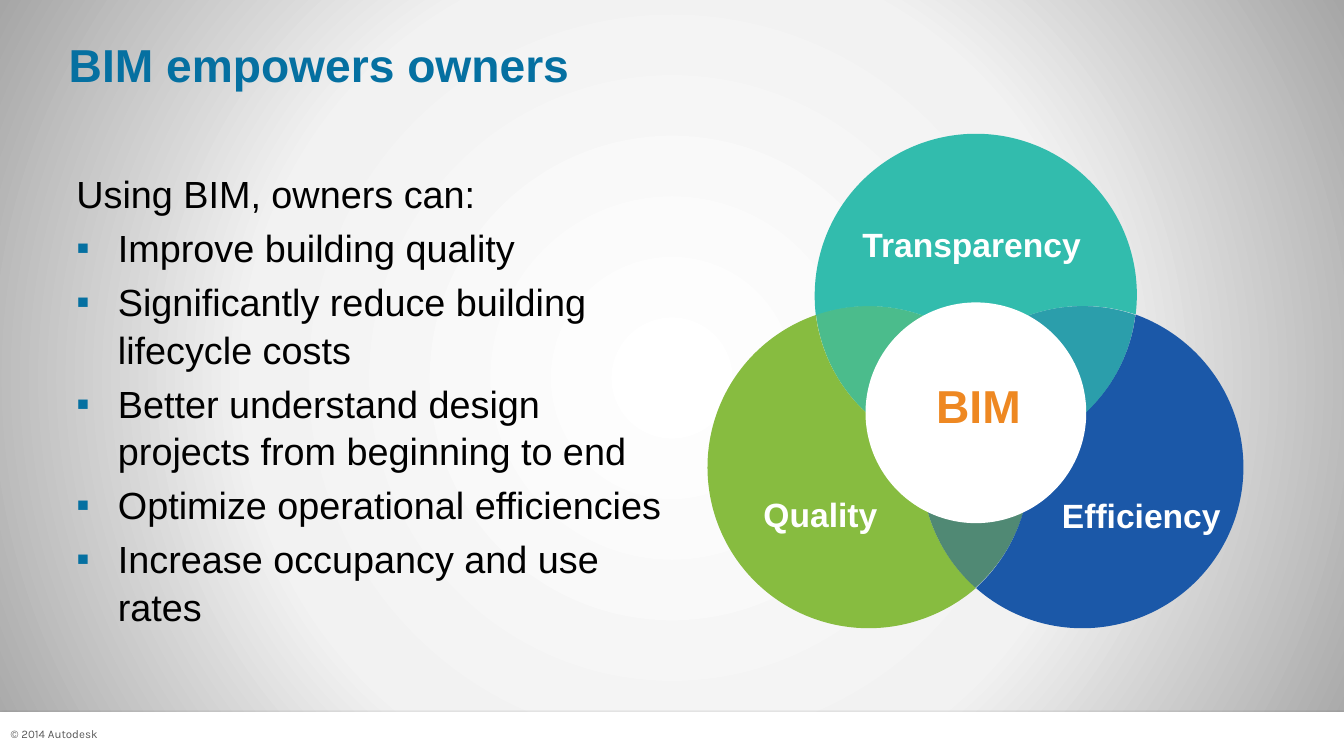
import math
from lxml import etree
from pptx import Presentation
from pptx import util as u
from pptx.dml import color
from pptx.enum import shapes, text
from pptx.oxml import ns, parse_xml

COLORS = {
    "white": "FFFFFF", "black": "000000", "gray": "595959", "title": "0570A1",
    "teal": "32BCAD", "blue": "1B58A8", "green": "87BC40", "orange": "EE8822",
}
RADIUS = 2.13
CENTERS = {"teal": (12.91, 3.9), "blue": (14.32, 6.18), "green": (11.49, 6.18)}
CROSSINGS = {
    "left": (10.79, 4.16), "right": (15.02, 4.16), "bottom": (12.91, 7.78),
    "in_top": (12.91, 4.59), "in_left": (12.21, 5.9), "in_right": (13.61, 5.9),
}
LENSES = [
    ("green", "teal", 70, [("green", "left", "in_top"), ("blue", "in_top", "in_left"),
                           ("teal", "in_left", "left")]),
    ("blue", "teal", 70, [("teal", "right", "in_right"), ("green", "in_right", "in_top"),
                          ("blue", "in_top", "right")]),
    ("green", "blue", 50, [("blue", "bottom", "in_left"), ("teal", "in_left", "in_right"),
                           ("green", "in_right", "bottom")]),
]
PETALS = [
    [("teal", "left", "right"), ("blue", "right", "in_top"), ("green", "in_top", "left")],
    [("blue", "right", "bottom"), ("green", "bottom", "in_right"), ("teal", "in_right", "right")],
    [("green", "bottom", "left"), ("teal", "left", "in_left"), ("blue", "in_left", "bottom")],
]
BENEFITS = [
    "Improve building quality",
    "Significantly reduce building lifecycle costs",
    "Better understand design projects from beginning to end",
    "Optimize operational efficiencies",
    "Increase occupancy and use rates",
]


def arc(circle, start, end, outer=False):
    cx, cy = CENTERS[circle]
    a, b = (math.atan2(y - cy, x - cx) for x, y in (CROSSINGS[start], CROSSINGS[end]))
    sweep = (b - a) % math.tau if outer else (b - a + math.pi) % math.tau - math.pi
    count = 4 if outer else 1
    step = sweep / count
    pull = 4 / 3 * math.tan(step / 4)

    def point(t, k):
        return (cx + RADIUS * (math.cos(t) - k * math.sin(t)),
                cy + RADIUS * (math.sin(t) + k * math.cos(t)))

    points = []
    for i in range(count):
        t = a + i * step
        points += [point(t, pull), point(t + step, -pull), point(t + step, 0)]
    return points


def outline(arcs, petal=False):
    return [pt for i, part in enumerate(arcs) for pt in arc(*part, outer=petal and i == 0)]


class Deck:
    font = "Arial"

    def __init__(self, width, height):
        self.prs = Presentation()
        self.prs.slide_width, self.prs.slide_height = u.Inches(width), u.Inches(height)
        self.s = self.prs.slides.add_slide(self.prs.slide_layouts[6])

    def background(self, stops):
        gs = "".join(
            f'<a:gs pos="{pos * 1000}"><a:srgbClr val="{rgb}"><a:alpha val="{alpha * 1000}"/>'
            f'</a:srgbClr></a:gs>' for pos, rgb, alpha in stops)
        bg = parse_xml(
            f'<p:bg {ns.nsdecls("p", "a")}><p:bgPr><a:gradFill rotWithShape="1"><a:gsLst>{gs}</a:gsLst>'
            '<a:path path="circle"><a:fillToRect l="50000" t="50000" r="50000" b="50000"/></a:path>'
            '</a:gradFill><a:effectLst/></p:bgPr></p:bg>')
        self.s.shapes._spTree.addprevious(bg)

    def paint(self, sp, fill, opacity=100):
        sp.shadow.inherit = False
        sp.fill.solid()
        sp.fill.fore_color.rgb = color.RGBColor.from_string(COLORS[fill])
        sp.line.fill.background()
        if opacity < 100:
            clr = sp._element.spPr.find(".//" + ns.qn("a:srgbClr"))
            etree.SubElement(clr, ns.qn("a:alpha"), val=str(opacity * 1000))
        return sp

    def shape(self, kind, box, fill):
        return self.paint(self.s.shapes.add_shape(kind, *map(u.Inches, box)), fill)

    def footer_bar(self, box):
        sp = self.shape(shapes.MSO_SHAPE.RECTANGLE, box, "white")
        sp._element.spPr.find(ns.qn("a:effectLst")).append(parse_xml(
            f'<a:outerShdw {ns.nsdecls("a")} blurRad="{u.Pt(3.1)}" dist="{u.Pt(1.8)}" dir="5400000" '
            f'rotWithShape="0"><a:srgbClr val="{COLORS["black"]}"><a:alpha val="35000"/>'
            '</a:srgbClr></a:outerShdw>'))

    def curve(self, points, fill, opacity=100):
        pts = [(u.Inches(x), u.Inches(y)) for x, y in points]
        fb = self.s.shapes.build_freeform(*pts[-1])
        fb.add_line_segments(pts, close=True)
        sp = self.paint(fb.convert_to_shape(), fill, opacity)
        lines = sp._element.findall(".//" + ns.qn("a:lnTo"))
        for i in range(0, len(lines), 3):
            bez = etree.Element(ns.qn("a:cubicBezTo"))
            lines[i].addprevious(bez)
            for ln in lines[i:i + 3]:
                bez.append(ln[0])
                ln.getparent().remove(ln)

    def frame(self, box):
        tf = self.s.shapes.add_textbox(*map(u.Inches, box)).text_frame
        tf.word_wrap = True
        tf.margin_left = tf.margin_right = tf.margin_top = tf.margin_bottom = 0
        return tf

    def style(self, p, size, fill, bold=False, font=None):
        for r in p.runs:
            r.font.size, r.font.bold, r.font.name = u.Pt(size), bold, font or self.font
            r.font.color.rgb = color.RGBColor.from_string(COLORS[fill])

    def text(self, box, words, size, fill, bold=False, font=None):
        tf = self.frame(box)
        tf.text = words
        self.style(tf.paragraphs[0], size, fill, bold, font)
        return tf

    def label(self, box, words, size=32, fill="white", bottom=0):
        tf = self.text(box, words, size, fill, True)
        tf.vertical_anchor = text.MSO_ANCHOR.MIDDLE
        tf.margin_bottom = u.Inches(bottom)
        p = tf.paragraphs[0]
        p.alignment = text.PP_ALIGN.CENTER
        self.indent(p, 0.13, -0.01)

    def indent(self, p, left, first):
        pPr = p._p.get_or_add_pPr()
        pPr.set("marL", str(u.Inches(left)))
        pPr.set("indent", str(u.Inches(first)))
        return pPr

    def bullets(self, box, lead, items):
        tf = self.frame(box)
        for i, words in enumerate([lead] + items):
            p = tf.add_paragraph() if i else tf.paragraphs[0]
            p.text = words
            p.space_after = u.Pt(6)
            p.line_spacing = 1.05
            if i:
                pPr = self.indent(p, 0.67, -0.55)
                clr = etree.SubElement(pPr, ns.qn("a:buClr"))
                etree.SubElement(clr, ns.qn("a:srgbClr"), val=COLORS["title"])
                etree.SubElement(pPr, ns.qn("a:buFont"), typeface=self.font)
                etree.SubElement(pPr, ns.qn("a:buChar"), char="▪")
            else:
                self.indent(p, 0.12, 0)
            self.style(p, 36, "black")


def main():
    d = Deck(17.78, 10)
    d.background([(0, "FFFFFF", 100), (55, "F2F2F2", 100), (100, "A6A6A6", 56)])
    d.footer_bar((0, 9.42, 17.78, 0.58))
    d.text((0.14, 9.62, 1.42, 0.19), "© 2014 Autodesk", 11, "gray", font="Karla")
    d.bullets((0.89, 2.23, 8, 7.35), "Using BIM, owners can:", BENEFITS)
    d.text((0.91, 0.48, 16, 1.67), "BIM empowers owners", 44, "title", True)

    for base, tint, opacity, arcs in LENSES:
        d.curve(outline(arcs), base)
    for arcs in PETALS:
        d.curve(outline(arcs, petal=True), arcs[0][0])
    for base, tint, opacity, arcs in LENSES:
        d.curve(outline(arcs), tint, opacity)

    d.label((10.99, 2.71, 3.61, 1.04), "Transparency")
    d.label((13.78, 6.29, 2.52, 1.04), "Efficiency")
    d.label((9.28, 6.28, 3.03, 1.04), "Quality")
    d.shape(shapes.MSO_SHAPE.OVAL, (11.45, 4, 2.92, 2.92), "white")
    d.label((11.62, 5.08, 2.53, 1.04), "BIM", 44, "orange", bottom=0.48)
    d.prs.save("out.pptx")


if __name__ == "__main__":
    main()
